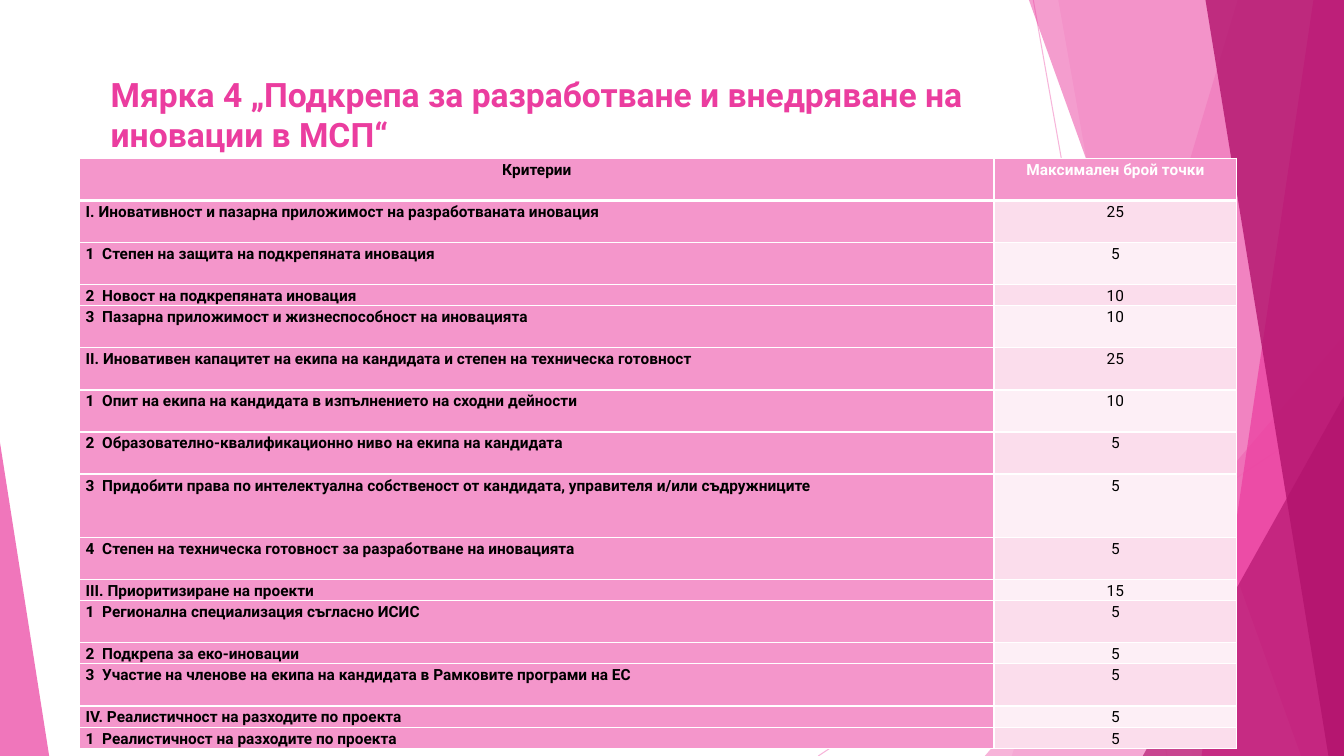
from lxml.etree import SubElement
from pptx import Presentation
from pptx.dml.color import RGBColor
from pptx.enum.shapes import MSO_CONNECTOR as Connector, MSO_SHAPE as Shape
from pptx.enum.text import MSO_ANCHOR as Anchor, PP_ALIGN as Align
from pptx.oxml.ns import qn
from pptx.util import Cm, Pt

# Content
TITLE = "Мярка 4 „Подкрепа за разработване и внедряване на иновации в МСП“"
# criterion, points, height in text lines
CRITERIA = [
    ("Критерии", "Максимален брой точки", 2),
    ("І. Иновативност и пазарна приложимост на разработваната иновация", "25", 2),
    ("1  Степен на защита на подкрепяната иновация", "5", 2),
    ("2  Новост на подкрепяната иновация", "10", 1),
    ("3  Пазарна приложимост и жизнеспособност на иновацията", "10", 2),
    ("ІІ. Иновативен капацитет на екипа на кандидата и степен на техническа готовност", "25", 2),
    ("1  Опит на екипа на кандидата в изпълнението на сходни дейности", "10", 2),
    ("2  Образователно-квалификационно ниво на екипа на кандидата", "5", 2),
    ("3  Придобити права по интелектуална собственост от кандидата, управителя и/или съдружниците",
     "5", 3),
    ("4  Степен на техническа готовност за разработване на иновацията", "5", 2),
    ("ІІІ. Приоритизиране на проекти", "15", 1),
    ("1  Регионална специализация съгласно ИСИС", "5", 2),
    ("2  Подкрепа за еко-иновации", "5", 1),
    ("3  Участие на членове на екипа на кандидата в Рамковите програми на ЕС", "5", 2),
    ("ІV. Реалистичност на разходите по проекта", "5", 1),
    ("1  Реалистичност на разходите по проекта", "5", 1),
]
COLORS = {"pink": "F496CB", "magenta": "EB3D9F", "plum": "B2136D", "white": "FFFFFF",
          "black": "000000", "odd": "FBDDEC", "even": "FDEFF6"}
FONT = "Roboto"

# Geometry in centimetres
WIDTH, HEIGHT = 33.87, 19.05
RAYS = [(26.04, 0, 29.41, HEIGHT), (WIDTH, 10.24, 20.62, HEIGHT)]
# bands reach the right edge: top-left x, bottom-left x, colour, opacity
BACK_BANDS = [(31.19, 25.5, "pink", 36), (26.67, 30.05, "pink", 20)]
FRONT_BANDS = [(25.93, 32.79, "magenta", 50), (33.1, 30.28, "magenta", 70),
               (30.38, 33.48, "plum", 80)]
# triangles stand on the bottom edge: left, top, width, apex, colour, opacity
BACK_TRIANGLE = (24.82, 8.46, 9.05, 1, "pink", 72)
FRONT_TRIANGLES = [(28.8, 9.98, 5.07, 1, "plum", 66), (0, 11.15, 1.24, 0, "magenta", 70)]
TITLE_BOX = (2.54, 1.73, 25.76, 2.92)
TABLE_LEFT, TABLE_TOP = 2.01, 3.99
COLUMN_WIDTHS = (23.04, 6.12)
LINE_HEIGHT = 0.53


def rgb(name):
    return RGBColor.from_string(COLORS[name])


def set_opacity(shape, percent):
    for color in shape.element.spPr.iter(qn("a:srgbClr")):
        SubElement(color, qn("a:alpha"), val=str(percent * 1000))


def paint(shape, color, opacity):
    shape.shadow.inherit = False
    shape.fill.solid()
    shape.fill.fore_color.rgb = rgb(color)
    shape.line.fill.background()
    set_opacity(shape, opacity)


def add_ray(page, x1, y1, x2, y2):
    ray = page.shapes.add_connector(Connector.STRAIGHT, Cm(x1), Cm(y1), Cm(x2), Cm(y2))
    ray.line.color.rgb = rgb("pink")
    ray.line.width = Pt(0.75)
    set_opacity(ray, 70)
    SubElement(ray.element.spPr, qn("a:effectLst"))


def add_band(page, top_x, bottom_x, color, opacity):
    builder = page.shapes.build_freeform(Cm(top_x), 0)
    corners = [(WIDTH, 0), (WIDTH, HEIGHT), (bottom_x, HEIGHT)]
    builder.add_line_segments([(Cm(x), Cm(y)) for x, y in corners], close=True)
    paint(builder.convert_to_shape(), color, opacity)


def add_triangle(page, left, top, width, apex, color, opacity):
    triangle = page.shapes.add_shape(Shape.ISOSCELES_TRIANGLE, Cm(left), Cm(top),
                                     Cm(width), Cm(HEIGHT - top))
    triangle.adjustments[0] = apex
    paint(triangle, color, opacity)


def format_run(span, size, color, bold):
    span.font.name = FONT
    span.font.size = Pt(size)
    span.font.bold = bold
    span.font.color.rgb = rgb(color)


def set_borders(cell, is_header):
    properties = cell._tc.get_or_add_tcPr()
    for side in "LRTB":
        points = 3 if is_header and side == "B" else 1
        border = SubElement(properties, qn("a:ln" + side), w=str(Pt(points)))
        SubElement(SubElement(border, qn("a:solidFill")), qn("a:srgbClr"), val=COLORS["white"])


def fill_cell(cell, text, row, column):
    is_header = row == 0
    is_points = column == 1
    set_borders(cell, is_header)
    cell.margin_left = cell.margin_right = Cm(0.15)
    cell.margin_top = cell.margin_bottom = 0
    cell.fill.solid()
    stripe = "odd" if row % 2 else "even"
    cell.fill.fore_color.rgb = rgb(stripe if is_points and not is_header else "pink")
    cell.text_frame.text = text
    para = cell.text_frame.paragraphs[0]
    para.alignment = Align.CENTER if is_header or is_points else Align.LEFT
    para.line_spacing = 1.15
    format_run(para.runs[0], 11, "white" if is_header and is_points else "black",
               is_header or not is_points)


def add_criteria_table(page):
    line_total = sum(lines for _, _, lines in CRITERIA)
    frame = page.shapes.add_table(len(CRITERIA), len(COLUMN_WIDTHS), Cm(TABLE_LEFT), Cm(TABLE_TOP),
                                  Cm(sum(COLUMN_WIDTHS)), Cm(line_total * LINE_HEIGHT))
    table = frame.table
    for column, width in zip(table.columns, COLUMN_WIDTHS):
        column.width = Cm(width)
    for row, (criterion, points, lines) in enumerate(CRITERIA):
        table.rows[row].height = Cm(lines * LINE_HEIGHT)
        for column, text in enumerate((criterion, points)):
            fill_cell(table.cell(row, column), text, row, column)


def main():
    deck = Presentation()
    deck.slide_width, deck.slide_height = Cm(WIDTH), Cm(HEIGHT)
    page = deck.slides.add_slide(deck.slide_layouts[6])

    # Background facets, back to front
    for ray in RAYS:
        add_ray(page, *ray)
    for band in BACK_BANDS:
        add_band(page, *band)
    add_triangle(page, *BACK_TRIANGLE)
    for band in FRONT_BANDS:
        add_band(page, *band)
    for triangle in FRONT_TRIANGLES:
        add_triangle(page, *triangle)

    # Title
    box = page.shapes.add_textbox(*map(Cm, TITLE_BOX))
    box.text_frame.word_wrap = True
    box.text_frame.vertical_anchor = Anchor.TOP
    box.text_frame.text = TITLE
    format_run(box.text_frame.paragraphs[0].runs[0], 24, "magenta", True)

    # Criteria and points
    add_criteria_table(page)
    deck.save("out.pptx")


if __name__ == "__main__":
    main()
